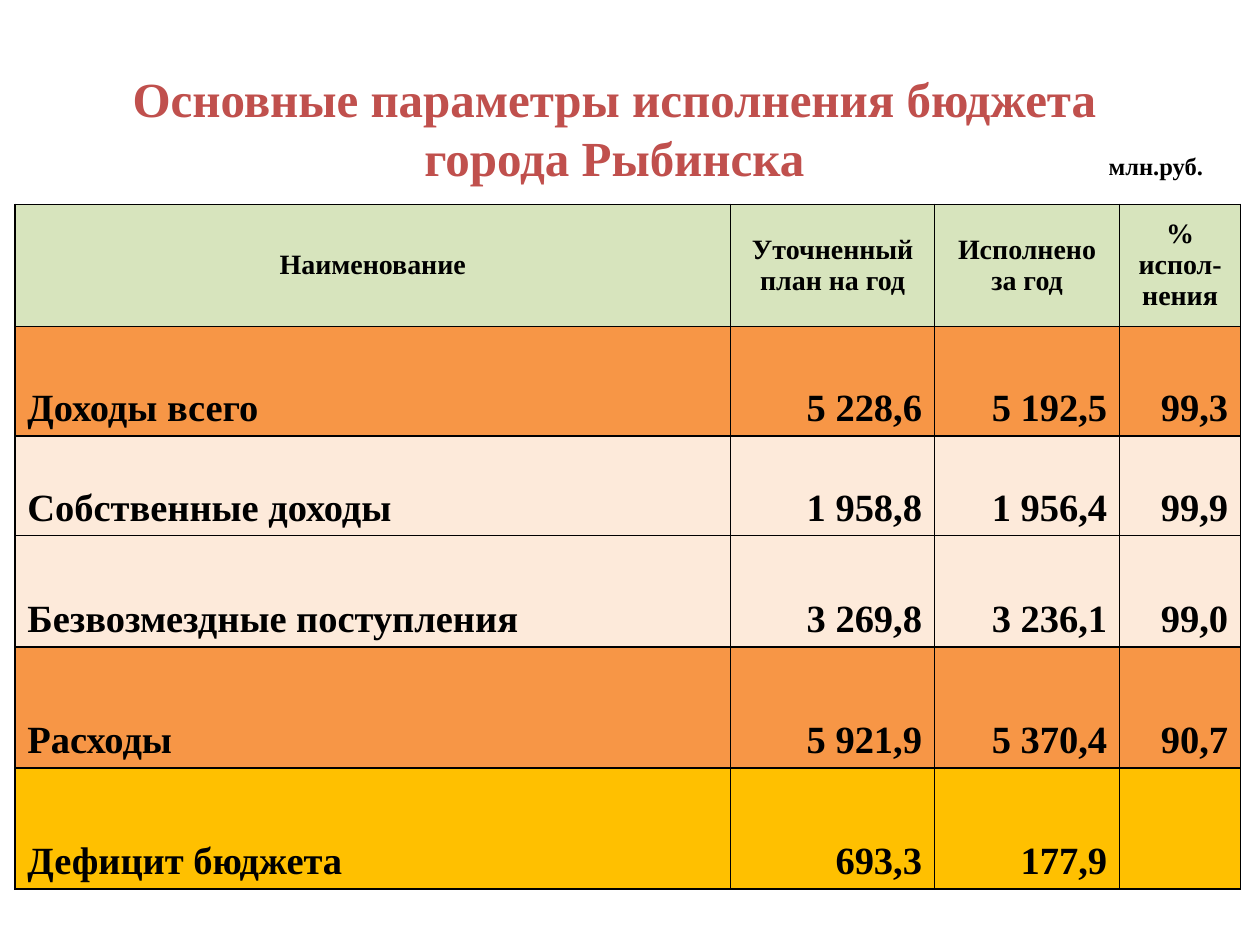
from dataclasses import dataclass

from lxml import etree
from pptx import Presentation
from pptx.dml.color import RGBColor
from pptx.enum.text import MSO_ANCHOR, PP_ALIGN
from pptx.oxml.ns import qn
from pptx.util import Cm, Pt

LEFT, CENTER, RIGHT = PP_ALIGN.LEFT, PP_ALIGN.CENTER, PP_ALIGN.RIGHT
MIDDLE, BOTTOM = MSO_ANCHOR.MIDDLE, MSO_ANCHOR.BOTTOM


@dataclass(frozen=True)
class Theme:
    face: str = "Times New Roman"
    ink: str = "000000"
    title: str = "C0504D"
    head: str = "D7E4BD"
    total: str = "F79646"
    detail: str = "FDEADA"
    gap: str = "FFC000"
    title_size: int = 28
    body_size: int = 22
    head_size: int = 16
    unit_size: int = 14
    border: int = 1


THEME = Theme()
COLS = (14.43, 4.11, 3.73, 2.44)
ROWS = (2.46, 2.21, 2.01, 2.24, 2.44, 2.44)
HEADS = ("Наименование", "Уточненный план на год", "Исполнено\nза год", "% испол- нения")
DATA = (
    (THEME.total, "Доходы всего", "5 228,6", "5 192,5", "99,3"),
    (THEME.detail, "Собственные доходы", "1 958,8", "1 956,4", "99,9"),
    (THEME.detail, "Безвозмездные поступления", "3 269,8", "3 236,1", "99,0"),
    (THEME.total, "Расходы", "5 921,9", "5 370,4", "90,7"),
    (THEME.gap, "Дефицит бюджета", "693,3", "177,9", ""),
)


def write(frame, text, size, align, color=THEME.ink):
    frame.text = text
    for para in frame.paragraphs:
        para.alignment = align
        font = para.font
        font.name, font.size, font.bold = THEME.face, Pt(size), True
        font.color.rgb = RGBColor.from_string(color)


def add_text(slide, box, text, size, align, color=THEME.ink, wrap=True):
    frame = slide.shapes.add_textbox(*map(Cm, box)).text_frame
    frame.word_wrap = wrap
    write(frame, text, size, align, color)
    return frame


def add_title(slide, box):
    frame = add_text(slide, box, "Основные параметры исполнения бюджета города Рыбинска",
                     THEME.title_size, CENTER, THEME.title)
    frame.vertical_anchor = BOTTOM
    frame.margin_bottom = Cm(0.38)


def add_borders(cell):
    props = cell._tc.get_or_add_tcPr()
    for place, side in enumerate(("a:lnL", "a:lnR", "a:lnT", "a:lnB")):
        line = etree.Element(qn(side), w=str(Pt(THEME.border)))
        fill = etree.SubElement(line, qn("a:solidFill"))
        etree.SubElement(fill, qn("a:srgbClr"), val=THEME.ink)
        props.insert(place, line)


def fill_cell(cell, text, fill, size, align, anchor):
    write(cell.text_frame, text, size, align)
    cell.vertical_anchor = anchor
    cell.fill.solid()
    cell.fill.fore_color.rgb = RGBColor.from_string(fill)
    add_borders(cell)


def add_budget(slide, left, top):
    box = map(Cm, (left, top, sum(COLS), sum(ROWS)))
    table = slide.shapes.add_table(len(ROWS), len(COLS), *box).table
    for col, width in zip(table.columns, COLS):
        col.width = Cm(width)
    for row, height in zip(table.rows, ROWS):
        row.height = Cm(height)
    for c, text in enumerate(HEADS):
        fill_cell(table.cell(0, c), text, THEME.head, THEME.head_size, CENTER, MIDDLE)
    for r, (fill, *texts) in enumerate(DATA, 1):
        for c, text in enumerate(texts):
            fill_cell(table.cell(r, c), text, fill, THEME.body_size,
                      RIGHT if c else LEFT, BOTTOM)


def main():
    deck = Presentation()
    deck.slide_width, deck.slide_height = Cm(25.4), Cm(19.05)
    slide = deck.slides.add_slide(deck.slide_layouts[6])
    add_title(slide, (2.29, 2.13, 20.19, 2.01))
    add_budget(slide, 0.3, 4.12)
    add_text(slide, (22.1, 2.92, 2.44, 0.86), "млн.руб.", THEME.unit_size, LEFT, wrap=False)
    deck.save("out.pptx")


if __name__ == "__main__":
    main()
